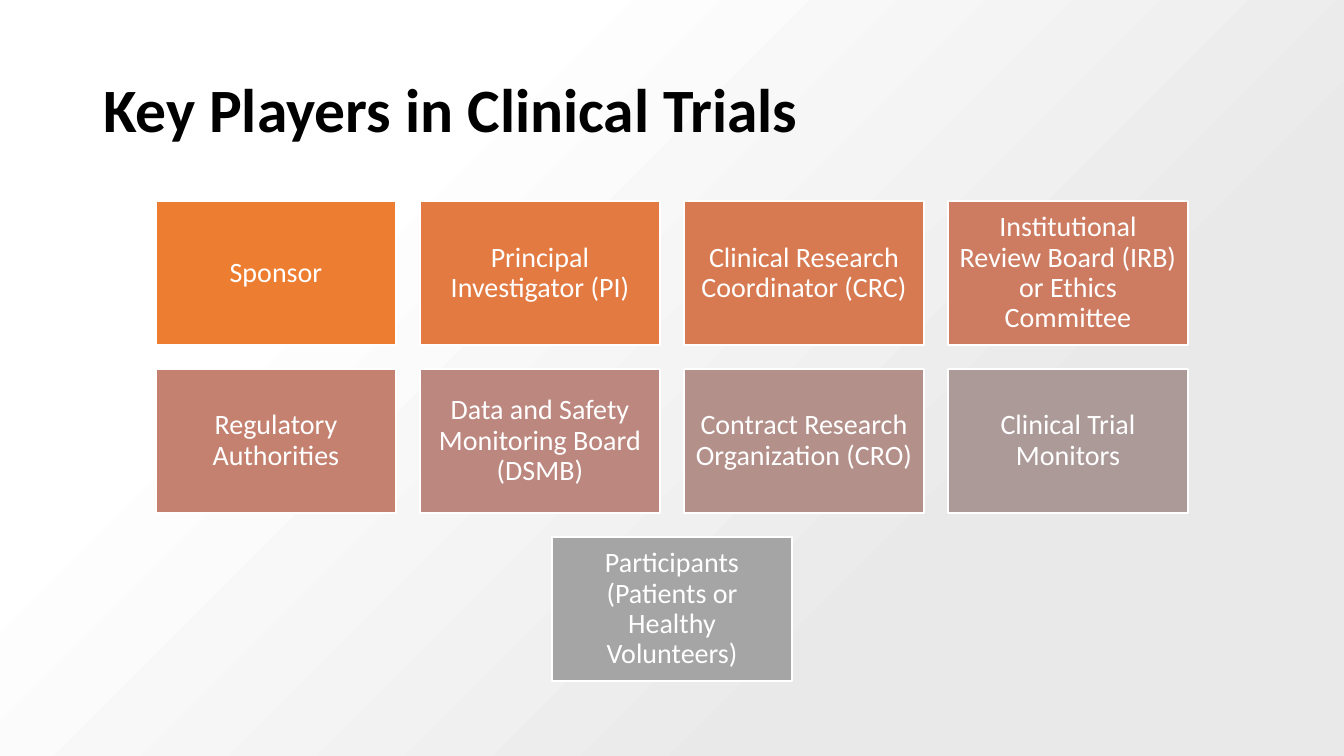
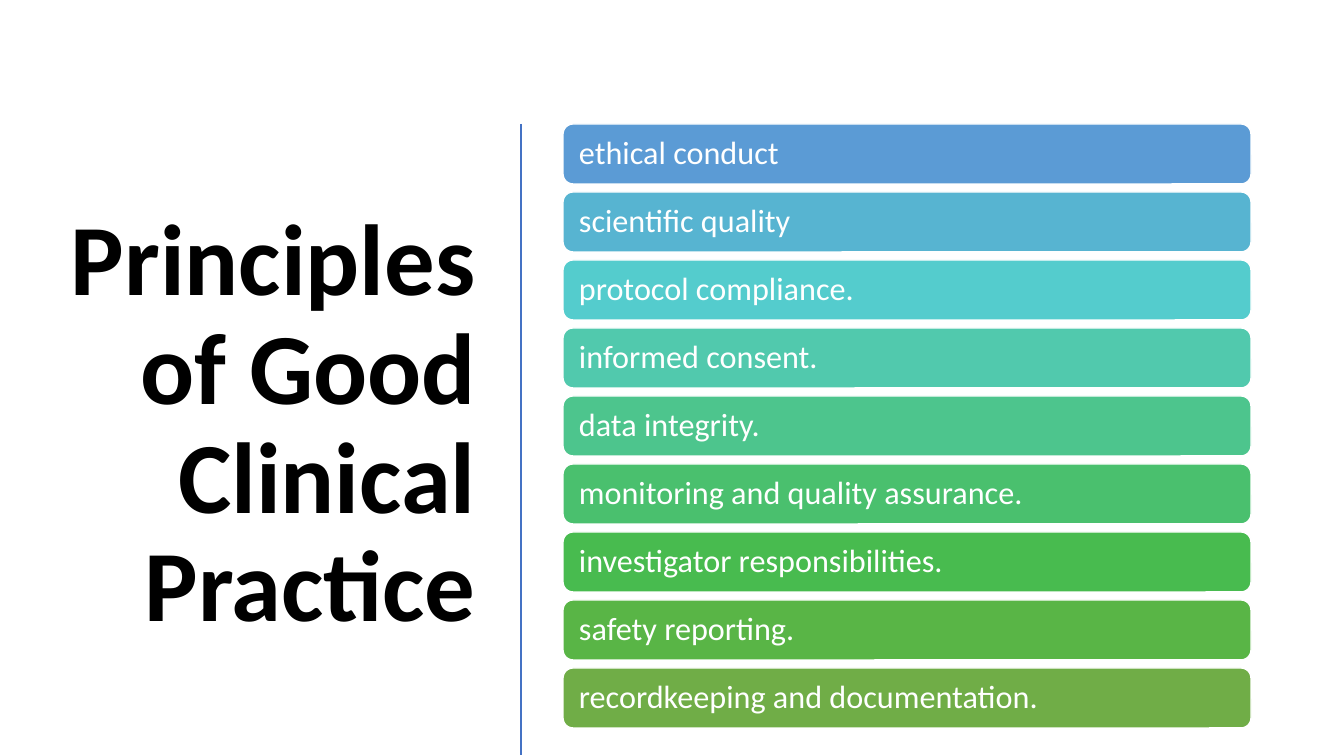
"""Build two slides on clinical trials: key players and good clinical practice."""
from lxml import etree
from pptx import Presentation
from pptx.dml.color import RGBColor
from pptx.enum.shapes import MSO_CONNECTOR, MSO_SHAPE
from pptx.enum.text import MSO_ANCHOR, MSO_AUTO_SIZE, PP_ALIGN
from pptx.oxml.ns import qn
from pptx.util import Emu, Pt

W, H = 1344, 756
SCALE = 12192000 / W
FONT = "Calibri"
BLACK = RGBColor(0x00, 0x00, 0x00)
WHITE = RGBColor(0xFF, 0xFF, 0xFF)
GREY = RGBColor(0xEA, 0xE9, 0xE9)
BLUE = RGBColor(0x44, 0x72, 0xC4)

PLAYER_ROWS = [
    [("Sponsor", RGBColor(0xED, 0x7D, 0x31)),
     ("Principal Investigator (PI)", RGBColor(0xE2, 0x7A, 0x42)),
     ("Clinical Research Coordinator (CRC)", RGBColor(0xD8, 0x7A, 0x51)),
     ("Institutional Review Board (IRB) or Ethics Committee", RGBColor(0xCE, 0x7C, 0x61))],
    [("Regulatory Authorities", RGBColor(0xC4, 0x81, 0x70)),
     ("Data and Safety Monitoring Board (DSMB)", RGBColor(0xBC, 0x87, 0x7E)),
     ("Contract Research Organization (CRO)", RGBColor(0xB4, 0x90, 0x8B)),
     ("Clinical Trial Monitors", RGBColor(0xAC, 0x9A, 0x99))],
    [("Participants (Patients or Healthy Volunteers)", RGBColor(0xA5, 0xA5, 0xA5))],
]
PRINCIPLES = [
    ("ethical conduct", RGBColor(0x5B, 0x9B, 0xD5)),
    ("scientific quality", RGBColor(0x57, 0xB4, 0xD1)),
    ("protocol compliance.", RGBColor(0x54, 0xCC, 0xCD)),
    ("informed consent.", RGBColor(0x51, 0xC9, 0xAD)),
    ("data integrity.", RGBColor(0x4D, 0xC5, 0x8D)),
    ("monitoring and quality assurance.", RGBColor(0x4A, 0xC0, 0x6E)),
    ("investigator responsibilities.", RGBColor(0x48, 0xBB, 0x4F)),
    ("safety reporting.", RGBColor(0x59, 0xB5, 0x46)),
    ("recordkeeping and documentation.", RGBColor(0x70, 0xAD, 0x47)),
]


def px(*lengths):
    return [Emu(round(n * SCALE)) for n in lengths]


def write(sp, text, size, color, align, bold=False):
    tf = sp.text_frame
    tf.text = text
    tf.word_wrap = True
    tf.auto_size = MSO_AUTO_SIZE.NONE
    tf.vertical_anchor = MSO_ANCHOR.MIDDLE
    p = tf.paragraphs[0]
    p.alignment = align
    p.line_spacing = 0.9
    f = p.runs[0].font
    f.name, f.size, f.bold, f.color.rgb = FONT, Pt(size), bold, color


prs = Presentation()
prs.slide_width, prs.slide_height = px(W, H)

slides = []
for text, box, size, align in [
    ("Key Players in Clinical Trials", (93, 40, 1159, 146), 44, PP_ALIGN.LEFT),
    ("Principles of Good Clinical Practice", (52, 118, 434, 616), 72, PP_ALIGN.RIGHT),
]:
    s = prs.slides.add_slide(prs.slide_layouts[5])
    title = s.shapes.title
    title.left, title.top, title.width, title.height = px(*box)
    write(title, text, size, BLACK, align, bold=True)
    slides.append(s)
players, practice = slides

backdrop = players.shapes.add_shape(MSO_SHAPE.RECTANGLE, *px(0, 0, W, H))
backdrop.shadow.inherit = False
backdrop.line.fill.background()
backdrop.fill.gradient()
backdrop.fill.gradient_angle = 315
for stop, position, color in zip(backdrop.fill.gradient_stops, (0.26, 0.72), (WHITE, GREY)):
    stop.position = position
    stop.color.rgb = color
players.shapes.title.element.addprevious(backdrop.element)

box_w, box_h, gap = 240, 144, 24
boxes = []
for i, row in enumerate(PLAYER_ROWS):
    left = (W - len(row) * (box_w + gap) + gap) // 2
    for j, (text, color) in enumerate(row):
        place = (left + j * (box_w + gap), 201 + i * (box_h + gap), box_w, box_h)
        boxes.append((players, MSO_SHAPE.RECTANGLE, place, text, color, 20, 1.5, PP_ALIGN.CENTER, 8))
for i, (text, color) in enumerate(PRINCIPLES):
    place = (563, 124 + i * 68, 688, 60)
    boxes.append((practice, MSO_SHAPE.ROUNDED_RECTANGLE, place, text, color, 23, 1, PP_ALIGN.LEFT, 13))

for s, kind, place, text, color, size, weight, align, inset in boxes:
    sp = s.shapes.add_shape(kind, *px(*place))
    sp.shadow.inherit = False
    sp.fill.solid()
    sp.fill.fore_color.rgb = color
    sp.line.color.rgb = WHITE
    sp.line.width = Pt(weight)
    tf = sp.text_frame
    tf.margin_left, tf.margin_right, tf.margin_top, tf.margin_bottom = px(inset, inset, 8, 8)
    write(sp, text, size, WHITE, align)

divider = practice.shapes.add_connector(MSO_CONNECTOR.STRAIGHT, *px(521, 124, 521, 755))
divider.line.color.rgb = BLUE
divider.line.width = Pt(2)
etree.SubElement(divider.element.spPr, qn("a:effectLst"))

prs.save("out.pptx")
